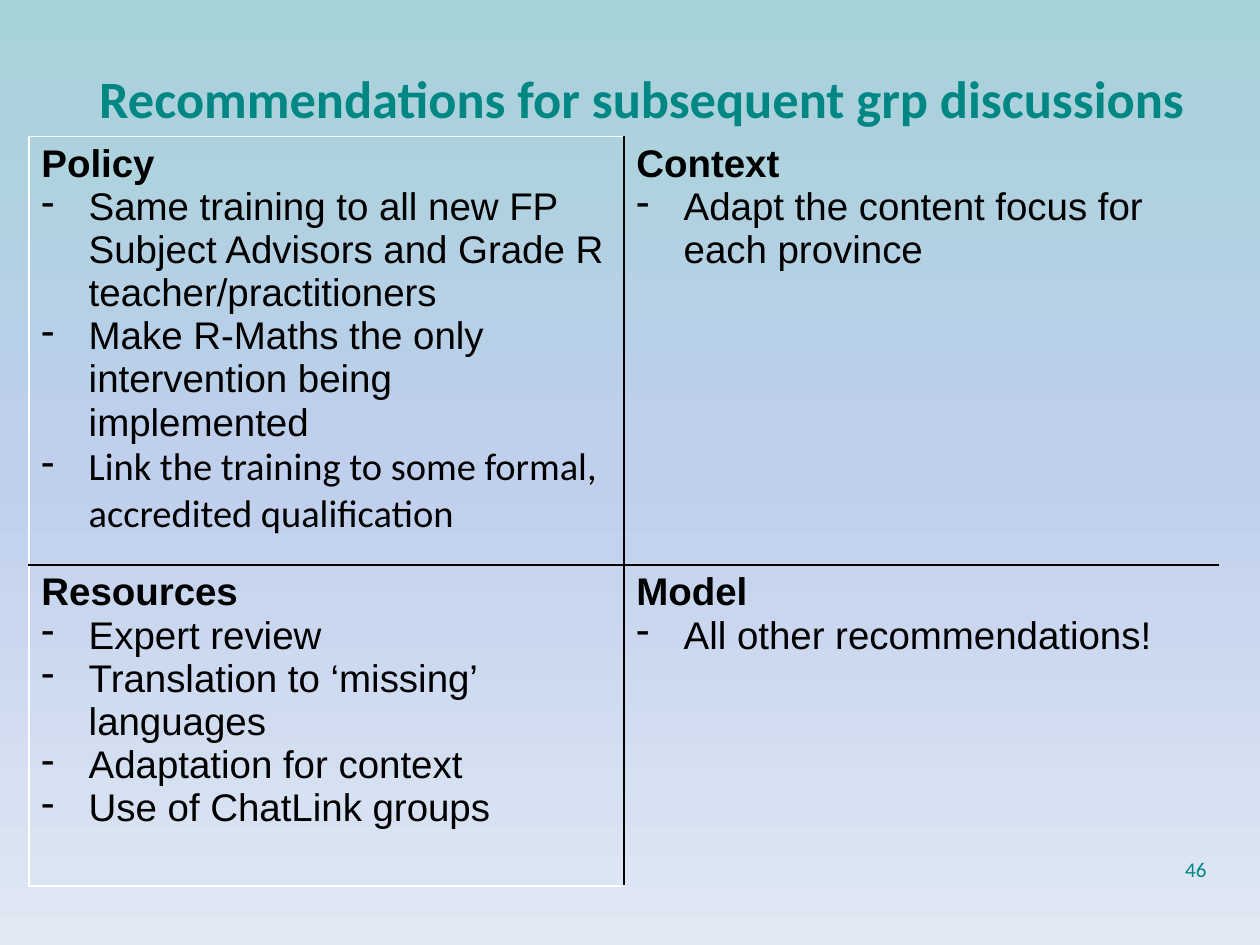
from copy import deepcopy

from lxml import etree
from pptx import Presentation
from pptx.dml.color import RGBColor
from pptx.enum.text import MSO_ANCHOR, PP_ALIGN
from pptx.oxml.ns import qn
from pptx.util import Pt

TEAL = RGBColor(0x00, 0x87, 0x84)
BLACK = RGBColor(0x00, 0x00, 0x00)
WHITE = RGBColor(0xFF, 0xFF, 0xFF)
GRADIENT = [
    (0, RGBColor(0xA6, 0xD3, 0xD8)),
    (0.5, RGBColor(0xBF, 0xCF, 0xEC)),
    (1, RGBColor(0xE0, 0xE8, 0xF4)),
]
LEFT, RIGHT, TOP, MIDDLE = PP_ALIGN.LEFT, PP_ALIGN.RIGHT, MSO_ANCHOR.TOP, MSO_ANCHOR.MIDDLE

TITLE = "Recommendations for subsequent grp discussions"
PAGE = "46"
# Each cell: heading, then (item, font) pairs
CELLS = [
    [
        ("Policy", [
            ("Same training to all new FP Subject Advisors and Grade R teacher/practitioners", "Arial"),
            ("Make R-Maths the only intervention being implemented", "Arial"),
            ("Link the training to some formal, accredited qualification", "Calibri"),
        ]),
        ("Context", [("Adapt the content focus for each province", "Arial")]),
    ],
    [
        ("Resources", [
            ("Expert review", "Arial"),
            ("Translation to ‘missing’ languages", "Arial"),
            ("Adaptation for context", "Arial"),
            ("Use of ChatLink groups", "Arial"),
        ]),
        ("Model", [("All other recommendations!", "Arial")]),
    ],
]
# Border colours of each cell: left, right, top, bottom
BORDERS = [
    [(WHITE, BLACK, WHITE, BLACK), (BLACK, None, None, BLACK)],
    [(WHITE, BLACK, BLACK, WHITE), (BLACK, None, BLACK, None)],
]
TABLE_LEFT, TABLE_TOP, TABLE_W, TABLE_H = 16.5, 78, 680, 402.5
ROW_H = 183.6
INDENT = 27


def set_font(p, size, name, color, bold=False):
    f = p.font
    f.size, f.name, f.bold = Pt(size), name, bold
    f.color.rgb = color


def set_background(s):
    fill = s.background.fill
    fill.gradient()
    fill.gradient_angle = 270
    stop_list = s.element.find(".//" + qn("a:gsLst"))
    stop_list.append(deepcopy(stop_list[-1]))
    for stop, (position, color) in zip(fill.gradient_stops, GRADIENT):
        stop.position = position
        stop.color.rgb = color


def set_borders(cell, colors):
    tc_pr = cell._tc.get_or_add_tcPr()
    for side, color in zip("LRTB", colors):
        ln = etree.SubElement(tc_pr, qn(f"a:ln{side}"), w=str(Pt(1)))
        if color is None:
            etree.SubElement(ln, qn("a:noFill"))
        else:
            solid = etree.SubElement(ln, qn("a:solidFill"))
            etree.SubElement(solid, qn("a:srgbClr"), val=str(color))


def add_dash(p):
    p_pr = p._p.get_or_add_pPr()
    p_pr.set("marL", str(Pt(INDENT)))
    p_pr.set("indent", str(-Pt(INDENT)))
    etree.SubElement(p_pr, qn("a:buChar"), char="-")


def fill_cell(cell, heading, items):
    tf = cell.text_frame
    p = tf.paragraphs[0]
    p.text = heading
    set_font(p, 22, "Arial", BLACK, bold=True)
    for text, font in items:
        p = tf.add_paragraph()
        p.text = text
        add_dash(p)
        set_font(p, 22, font, BLACK)


def fill_line(sp, text, size, align, anchor, bold=False):
    """Put one teal line of text in a title or text box."""
    tf = sp.text_frame
    tf.word_wrap = True
    tf.vertical_anchor = anchor
    p = tf.paragraphs[0]
    p.text = text
    p.alignment = align
    set_font(p, size, "Calibri", TEAL, bold)


def add_grid(s):
    frame = s.shapes.add_table(2, 2, Pt(TABLE_LEFT), Pt(TABLE_TOP), Pt(TABLE_W), Pt(TABLE_H))
    table = frame.table
    table.first_row = table.horz_banding = False
    for r, row in enumerate(table.rows):
        row.height = Pt(ROW_H)
        for c, cell in enumerate(row.cells):
            set_borders(cell, BORDERS[r][c])
            cell.fill.background()
            fill_cell(cell, *CELLS[r][c])
    frame.height = Pt(TABLE_H)


def main():
    prs = Presentation()
    prs.slide_width, prs.slide_height = Pt(720), Pt(540)
    s = prs.slides.add_slide(prs.slide_layouts[5])
    set_background(s)

    title = s.shapes.title
    title.left, title.top, title.width, title.height = Pt(49.5), Pt(34), Pt(648), Pt(44)
    fill_line(title, TITLE, 30, LEFT, TOP, bold=True)

    number = s.shapes.add_textbox(Pt(528.5), Pt(486), Pt(168), Pt(21.6))
    fill_line(number, PAGE, 12, RIGHT, MIDDLE)

    add_grid(s)
    prs.save("out.pptx")


if __name__ == "__main__":
    main()
